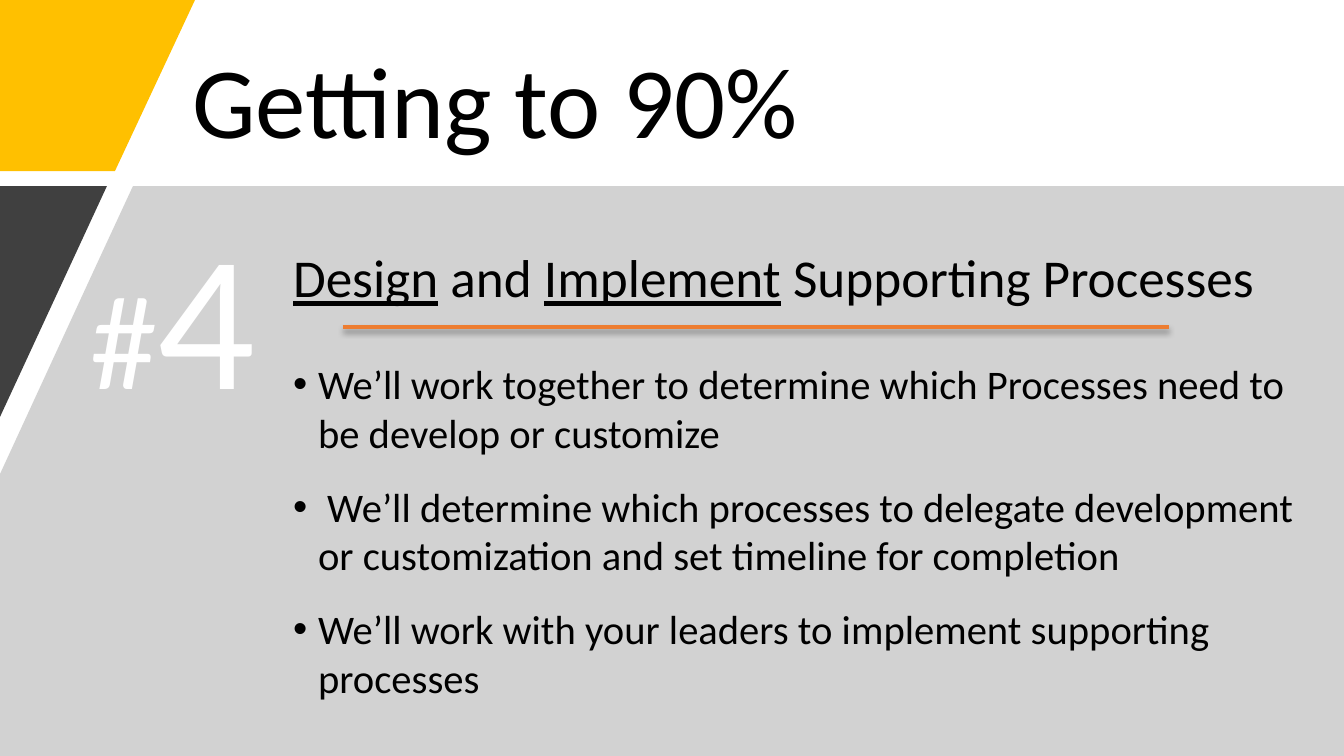
from dataclasses import dataclass

from lxml import etree
from pptx import Presentation
from pptx.dml.color import RGBColor
from pptx.enum.shapes import MSO_CONNECTOR
from pptx.enum.text import MSO_ANCHOR, MSO_AUTO_SIZE, PP_ALIGN
from pptx.oxml import parse_xml
from pptx.oxml.ns import nsdecls, qn
from pptx.util import Pt

STRAIGHT = MSO_CONNECTOR.STRAIGHT
TOP, MIDDLE = MSO_ANCHOR.TOP, MSO_ANCHOR.MIDDLE
NO_FIT, GROW = MSO_AUTO_SIZE.NONE, MSO_AUTO_SIZE.SHAPE_TO_FIT_TEXT
LEFT = PP_ALIGN.LEFT
EMU_PER_PX = 914400 / 100.8
SLIDE_W, SLIDE_H = 1344, 756


@dataclass(frozen=True)
class Theme:
    font: str = "Calibri"
    ink: str = "000000"
    white: str = "FFFFFF"
    gold: str = "FFC000"
    grey: str = "A6A6A6"
    charcoal: str = "404040"
    orange: str = "ED7D31"
    title: int = 72
    heading: int = 38
    bullet: int = 29
    hash: int = 96
    numeral: int = 138


THEME = Theme()

TITLE = "Getting to 90%"
# (text, underlined)
HEADING = [("Design", True), (" and ", False), ("Implement", True),
           (" Supporting Processes", False)]
BULLETS = [
    "We’ll work together to determine which Processes need to be develop or customize",
    " We’ll determine which processes to delegate development or customization"
    " and set timeline for completion",
    "We’ll work with your leaders to implement supporting processes",
]
STEP = [("#", THEME.hash), ("4", THEME.numeral)]

TITLE_BOX = (182, 40, 1032, 131)
BODY_BOX = (283, 232, 1045, 506)
STEP_BOX = (81, 191, 187, 244)
RULE = (343, 327, 1169, 327)
BULLET_INDENT = 25

BAND_TOP = 186
# (outline, colour, opacity in percent)
PANELS = [
    ([(0, 0), (195, 0), (115, 171), (0, 171)], THEME.gold, 100),
    ([(133, BAND_TOP), (SLIDE_W, BAND_TOP), (SLIDE_W, SLIDE_H), (0, SLIDE_H),
      (0, 474), (95, 268)], THEME.grey, 50),
    ([(0, BAND_TOP), (107, BAND_TOP), (0, 417)], THEME.charcoal, 100),
]


def px(length):
    return round(length * EMU_PER_PX)


def place(shape, box):
    shape.left, shape.top, shape.width, shape.height = map(px, box)


def add_run(paragraph, text, size, color=THEME.ink, underline=None):
    run = paragraph.add_run()
    run.text = text
    font = run.font
    font.name, font.size, font.underline = THEME.font, Pt(size), underline
    font.color.rgb = RGBColor.from_string(color)


def add_panel(shapes, outline, color, opacity):
    builder = shapes.build_freeform(*outline[0], scale=EMU_PER_PX)
    builder.add_line_segments(outline[1:], close=True)
    panel = builder.convert_to_shape()
    panel.shadow.inherit = False
    panel.line.fill.background()
    panel.fill.solid()
    panel.fill.fore_color.rgb = RGBColor.from_string(color)
    if opacity < 100:
        tint = panel._element.spPr.find(qn("a:solidFill"))[0]
        etree.SubElement(tint, qn("a:alpha"), val=str(opacity * 1000))


def format_body_paragraph(paragraph, before, after, spacing, bullet):
    paragraph.alignment = LEFT
    paragraph.space_before, paragraph.space_after = Pt(before), Pt(after)
    paragraph.line_spacing = spacing
    properties = paragraph._p.get_or_add_pPr()
    indent = px(BULLET_INDENT) if bullet else 0
    properties.set("marL", str(indent))
    properties.set("indent", str(-indent))
    if bullet:
        etree.SubElement(properties, qn("a:buFont"), typeface="Arial")
        etree.SubElement(properties, qn("a:buChar"), char="•")
    else:
        etree.SubElement(properties, qn("a:buNone"))


def fill_title(title):
    place(title, TITLE_BOX)
    frame = title.text_frame
    frame.auto_size, frame.vertical_anchor = NO_FIT, MIDDLE
    paragraph = frame.paragraphs[0]
    paragraph.alignment, paragraph.line_spacing = LEFT, 0.9
    add_run(paragraph, TITLE, THEME.title)


def fill_body(body):
    place(body, BODY_BOX)
    frame = body.text_frame
    frame.auto_size, frame.vertical_anchor = NO_FIT, TOP
    heading = frame.paragraphs[0]
    format_body_paragraph(heading, 6, 6, 1.12, bullet=False)
    for text, underline in HEADING:
        add_run(heading, text, THEME.heading, underline=underline)
    for index, text in enumerate(BULLETS):
        paragraph = frame.add_paragraph()
        format_body_paragraph(paragraph, 6 if index else 30, 12, 1.0, bullet=True)
        add_run(paragraph, text, THEME.bullet)


def add_step_number(shapes):
    frame = shapes.add_textbox(*map(px, STEP_BOX)).text_frame
    frame.word_wrap, frame.auto_size = False, GROW
    for text, size in STEP:
        add_run(frame.paragraphs[0], text, size, THEME.white)


def add_heading_rule(shapes):
    rule = shapes.add_connector(STRAIGHT, *map(px, RULE))
    rule.line.color.rgb = RGBColor.from_string(THEME.orange)
    rule.line.width = Pt(3)
    rule._element.spPr.append(parse_xml(
        f'<a:effectLst {nsdecls("a")}>'
        f'<a:outerShdw blurRad="{Pt(4)}" dist="{Pt(3)}" dir="5400000" rotWithShape="0">'
        f'<a:srgbClr val="{THEME.ink}"><a:alpha val="40000"/></a:srgbClr>'
        '</a:outerShdw></a:effectLst>'))


def main():
    deck = Presentation()
    deck.slide_width, deck.slide_height = px(SLIDE_W), px(SLIDE_H)
    slide = deck.slides.add_slide(deck.slide_layouts[1])
    shapes = slide.shapes
    body = slide.placeholders[1]
    fill_title(shapes.title)
    for panel in PANELS:
        add_panel(shapes, *panel)
    fill_body(body)
    body._element.getparent().append(body._element)  # in front of the panels
    add_step_number(shapes)
    add_heading_rule(shapes)
    deck.save("out.pptx")


if __name__ == "__main__":
    main()
